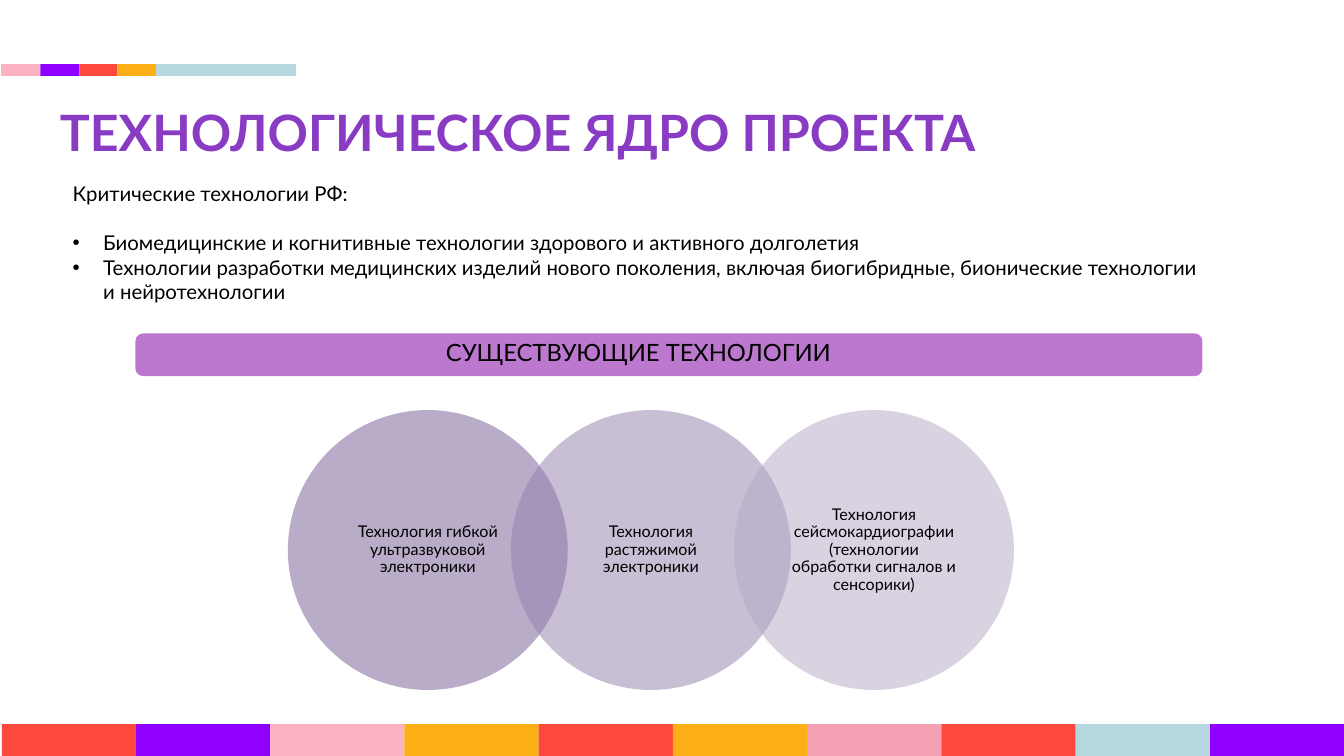
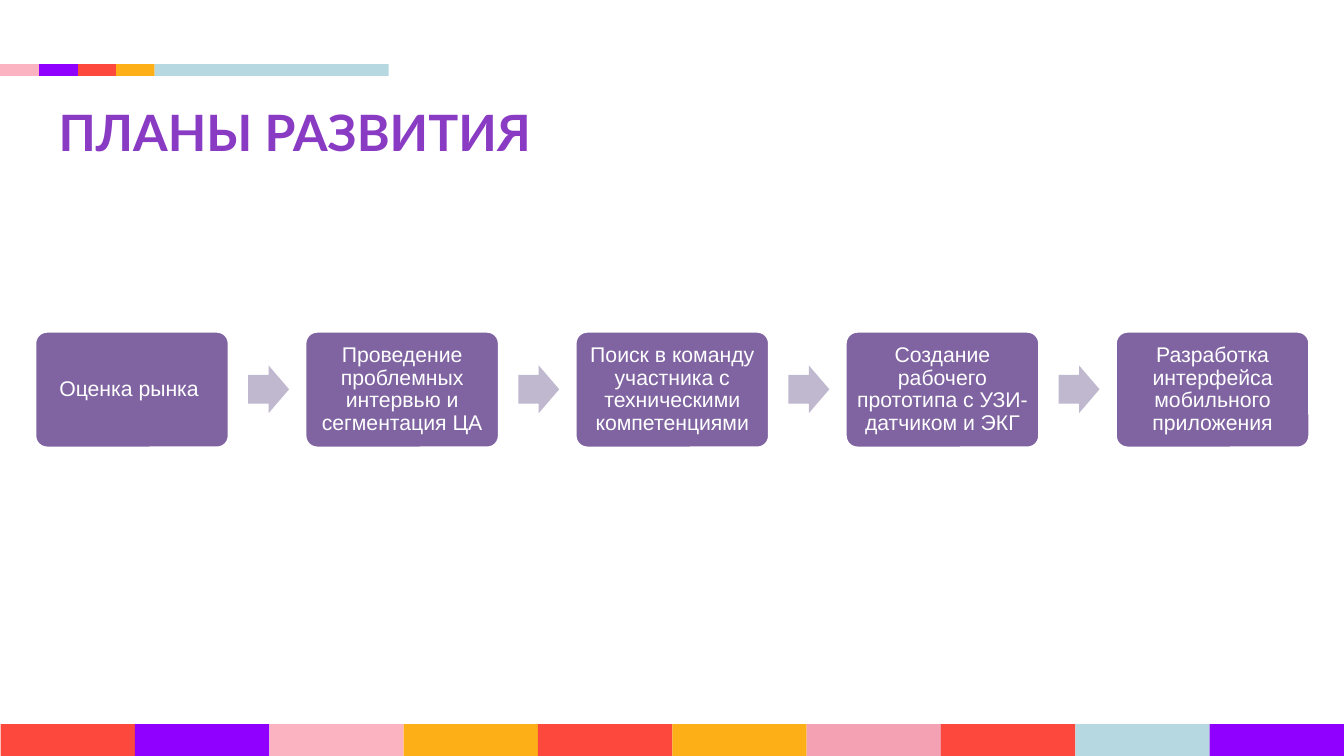
from lxml.etree import SubElement
from pptx import Presentation
from pptx.dml.color import RGBColor
from pptx.enum.shapes import MSO_SHAPE as Preset
from pptx.enum.text import MSO_ANCHOR as Anchor, PP_ALIGN as Align
from pptx.oxml.ns import qn
from pptx.util import Inches, Pt

WIDTH, HEIGHT = 21.99, 12.37
PINK, ROSE, VIOLET = "FBB3C1", "F4A1B3", "8F00FF"
RED, AMBER, SKY = "FD493D", "FCAF17", "B5D8E1"
BLACK, WHITE, TITLE = "000000", "FFFFFF", "893BC3"
BAR, STEP, ARROW = "BC77CF", "8064A2", "C0B8CE"
ACCENT = [(PINK, 0.64), (VIOLET, 0.64), (RED, 0.62), (AMBER, 0.63)]
FOOTER = [RED, VIOLET, PINK, AMBER, RED, AMBER, ROSE, RED, SKY, VIOLET]
TECHNOLOGIES = [
    ("Технология гибкой ультразвуковой электроники", "745B93"),
    ("Технология растяжимой электроники", "9380AD"),
    ("Технология сейсмокардиографии (технологии обработки сигналов и сенсорики)", "B4A9C5"),
]
STEPS = [
    "Оценка рынка ",
    "Проведение проблемных интервью и сегментация ЦА",
    "Поиск в команду участника с техническими компетенциями",
    "Создание рабочего прототипа с УЗИ-датчиком и ЭКГ",
    "Разработка интерфейса мобильного приложения",
]


def paint(color_format, color):
    """Apply a hex colour to a fill, line or font."""
    color_format.rgb = RGBColor.from_string(color)


def add_figure(slide, preset, box, fill, line=None, radius=None, alpha=None):
    """Add a flat filled shape; box is left, top, width, height."""
    figure = slide.shapes.add_shape(preset, *map(Inches, box))
    figure.shadow.inherit = False
    figure.fill.solid()
    paint(figure.fill.fore_color, fill)
    if line:
        paint(figure.line.color, line)
        figure.line.width = Pt(2)
    else:
        figure.line.fill.background()
    if radius is not None:
        figure.adjustments[0] = radius
    if alpha is not None:
        tint = figure.fill._xPr.find(qn("a:solidFill"))[0]
        SubElement(tint, qn("a:alpha")).set("val", str(alpha * 1000))
    return figure


def frame_text(figure, insets, anchor=Anchor.MIDDLE):
    """Prepare and return a wrapping text frame with the given insets."""
    frame = figure.text_frame
    frame.word_wrap = True
    frame.vertical_anchor = anchor
    frame.margin_left, frame.margin_top, frame.margin_right, frame.margin_bottom = map(Inches, insets)
    return frame


def write(paragraph, text, size, color=BLACK, font="Lato", bold=False,
          align=Align.LEFT, spacing=None, before=None, bullet=False):
    """Write one formatted paragraph."""
    paragraph.alignment = align
    paragraph.line_spacing = spacing
    if before is not None:
        paragraph.space_before = Pt(before)
    if bullet:
        properties = paragraph._p.get_or_add_pPr()
        properties.set("marL", str(Inches(0.5)))
        properties.set("indent", str(-Inches(0.5)))
        SubElement(properties, qn("a:buFont")).set("typeface", "Arial")
        SubElement(properties, qn("a:buChar")).set("char", "•")
    run = paragraph.add_run()
    run.text = text
    run.font.name = font
    run.font.size = Pt(size)
    run.font.bold = bold
    paint(run.font.color, color)


def add_text_area(slide, box, insets):
    """Add a text box and return its frame."""
    area = slide.shapes.add_textbox(*map(Inches, box))
    return frame_text(area, insets, Anchor.TOP)


def add_strip(slide, left, top, height, pieces):
    """Lay coloured pieces side by side."""
    for color, width in pieces:
        add_figure(slide, Preset.RECTANGLE, (left, top, width, height), color)
        left += width


def add_branded_slide(deck, title, left, tail):
    """Add a blank slide with the accent strip, footer and title."""
    slide = deck.slides.add_slide(deck.slide_layouts[6])
    add_strip(slide, left, 1.05, 0.19, ACCENT + [(SKY, tail)])
    start = left + 0.01
    tile = (WIDTH - start) / len(FOOTER)
    add_strip(slide, start, 11.85, 0.52, [(color, tile) for color in FOOTER])
    heading = add_text_area(slide, (left + 0.96, 1.64, 20.5, 1.01), (0, 0.02, 0, 0))
    write(heading.paragraphs[0], title, 59, color=TITLE, bold=True)
    return slide


def add_critical_list(slide):
    """Add the list of critical technologies."""
    frame = add_text_area(slide, (1.09, 2.92, 18.73, 2.2), (0.1, 0.05, 0.1, 0.05))
    write(frame.paragraphs[0], "Критические технологии РФ:", 24)
    write(frame.add_paragraph(),
          "Биомедицинские и когнитивные технологии здорового и активного долголетия",
          24, bullet=True, before=28.8)
    write(frame.add_paragraph(),
          "Технологии разработки медицинских изделий нового поколения, включая "
          "биогибридные, бионические технологии и нейротехнологии",
          24, bullet=True, before=0)


def add_technology_circles(slide):
    """Add the overlapping translucent circles."""
    for index, (label, color) in enumerate(TECHNOLOGIES):
        circle = add_figure(slide, Preset.OVAL, (4.71 + 3.65 * index, 6.71, 4.58, 4.58),
                            color, alpha=50)
        frame = frame_text(circle, (0.25, 0.03, 0.25, 0.03))
        write(frame.paragraphs[0], label, 19, align=Align.CENTER, spacing=0.9)


def add_existing_bar(slide):
    """Add the bar that heads the existing technologies."""
    bar = add_figure(slide, Preset.ROUNDED_RECTANGLE, (2.23, 5.47, 17.43, 0.67), BAR, line=BAR)
    frame = frame_text(bar, (0, 0, 1, 0.1))
    write(frame.paragraphs[0], "СУЩЕСТВУЮЩИЕ ТЕХНОЛОГИИ", 28, align=Align.CENTER)


def add_step_chain(slide):
    """Add the plan steps with arrows between them."""
    for index, label in enumerate(STEPS):
        left = 0.58 + 4.42 * index
        step = add_figure(slide, Preset.ROUNDED_RECTANGLE, (left, 5.43, 3.16, 1.89),
                          STEP, line=WHITE, radius=0.1)
        frame = frame_text(step, (0.1, 0.1, 0.1, 0.1))
        write(frame.paragraphs[0], label, 25, color=WHITE, font="Arial",
              align=Align.CENTER, spacing=0.9)
        if index < len(STEPS) - 1:
            add_figure(slide, Preset.RIGHT_ARROW, (left + 3.48, 5.98, 0.67, 0.78),
                       ARROW, radius=0.6)


def main():
    """Build and save the presentation."""
    deck = Presentation()
    deck.slide_width, deck.slide_height = Inches(WIDTH), Inches(HEIGHT)
    core = add_branded_slide(deck, "ТЕХНОЛОГИЧЕСКОЕ ЯДРО ПРОЕКТА", left=0.02, tail=2.29)
    add_critical_list(core)
    add_technology_circles(core)
    add_existing_bar(core)
    plans = add_branded_slide(deck, "ПЛАНЫ РАЗВИТИЯ", left=0, tail=3.83)
    add_step_chain(plans)
    deck.save("out.pptx")


if __name__ == "__main__":
    main()
